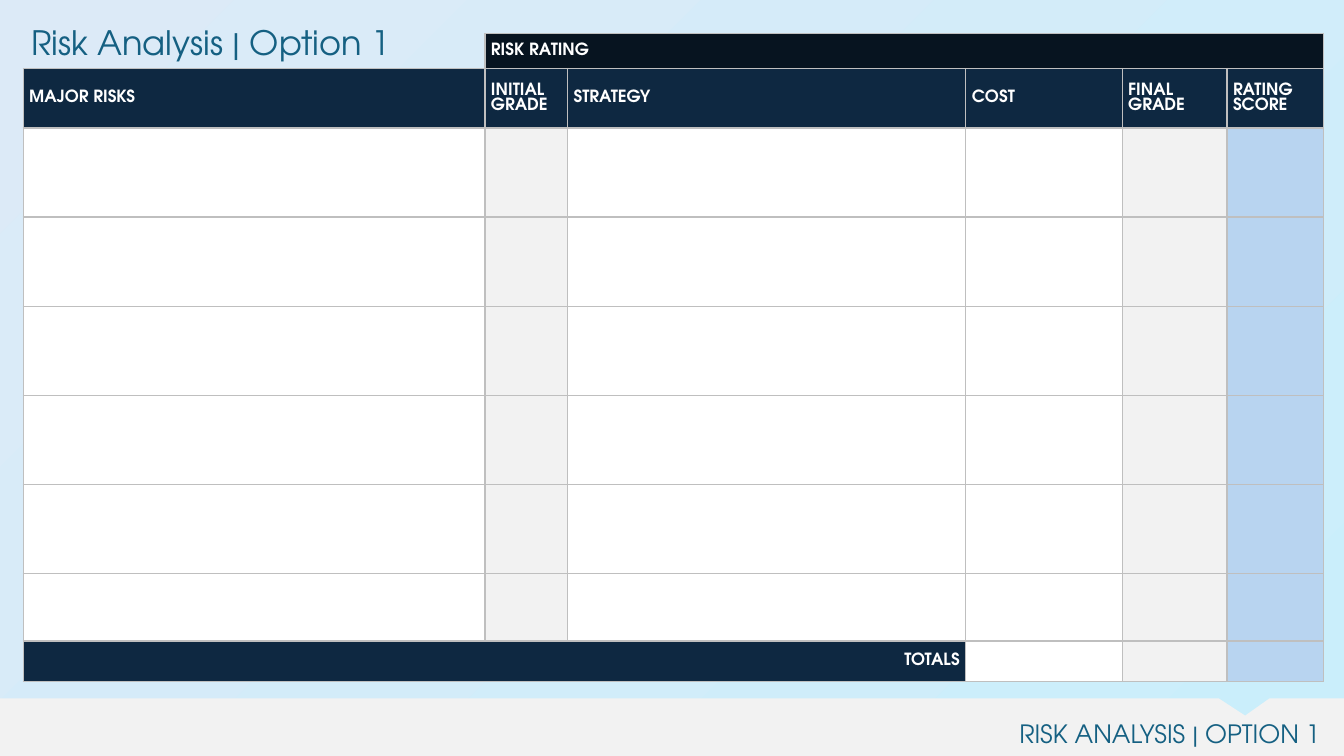
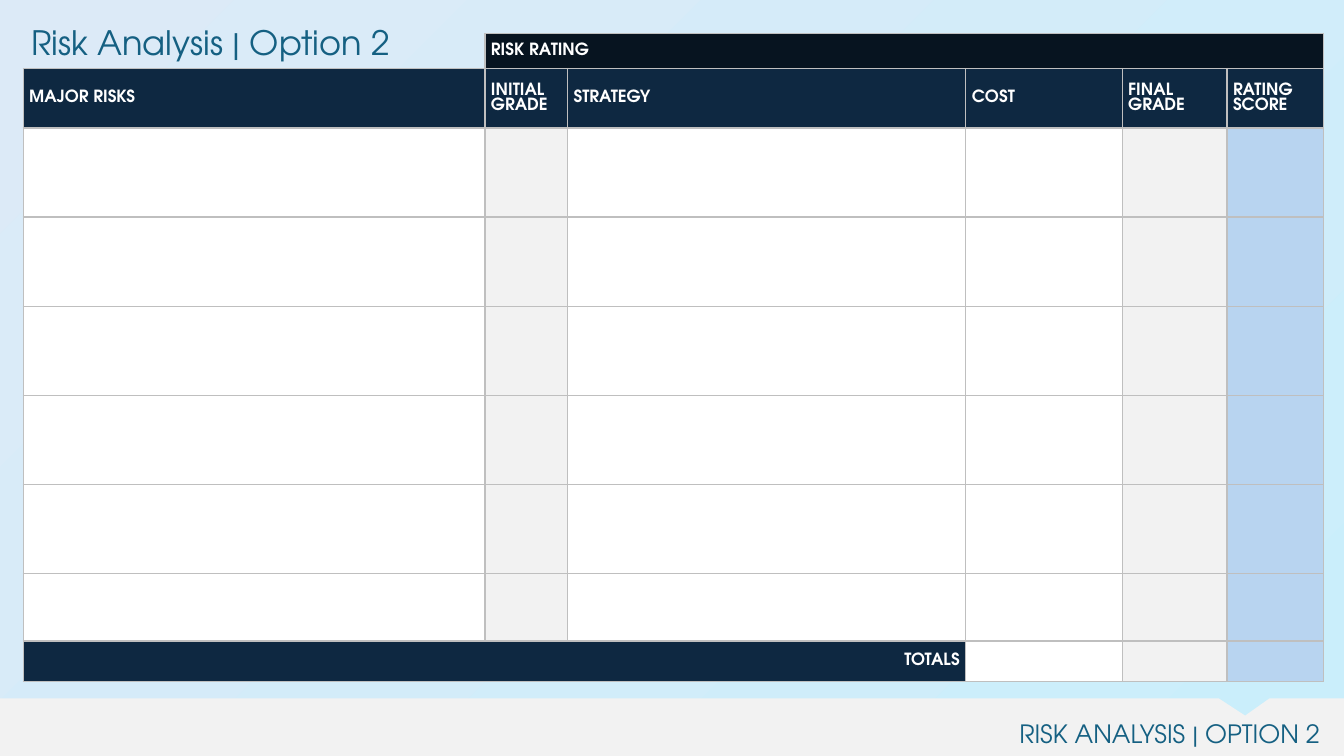
from dataclasses import dataclass
from typing import Any

import lxml.etree
import pptx
import pptx.dml.color
import pptx.enum.text
import pptx.oxml.ns
import pptx.util

Inches = pptx.util.Inches
Align = pptx.enum.text.PP_ALIGN
Anchor = pptx.enum.text.MSO_ANCHOR
qn = pptx.oxml.ns.qn

COLORS = {
    "sky": "CAEEFB",
    "mist": "DCEAF7",
    "band": "F2F2F2",
    "heading": "156082",
    "rating": "071420",
    "navy": "0E2841",
    "white": "FFFFFF",
    "score": "B8D4F0",
    "rule": "BFBFBF",
}
FONT = "TeX Gyre Adventor"
TITLE_FONT = {"name": FONT, "size": pptx.util.Pt(24), "bold": False}
FOOTER_FONT = {"name": FONT, "size": pptx.util.Pt(18), "bold": False}
LABEL_FONT = {"name": FONT, "size": pptx.util.Pt(12), "bold": True}
CELL_FORMAT = {
    "margin_left": Inches(0.06),
    "margin_right": Inches(0.06),
    "margin_top": 0,
    "margin_bottom": 0,
    "vertical_anchor": Anchor.MIDDLE,
}
BAND_OUTLINE = [
    (0, 6.93), (12.09, 6.93), (12.35, 7.1), (12.59, 6.93),
    (13.33, 6.93), (13.33, 7.5), (0, 7.5),
]
ROW_HEIGHTS = [0.35, 0.59] + [4.42 / 5] * 5 + [0.67, 0.4]
ALL_SIDES = ("lnL", "lnR", "lnT", "lnB")


@dataclass(frozen=True)
class Column:
    heading: str
    width: float
    fill: str


COLUMNS = [
    Column("MAJOR RISKS", 4.58, "white"),
    Column("INITIAL GRADE", 0.82, "band"),
    Column("STRATEGY", 3.95, "white"),
    Column("COST", 1.55, "white"),
    Column("FINAL GRADE", 1.04, "band"),
    Column("RATING SCORE", 0.96, "score"),
]


def rgb(color: str) -> pptx.dml.color.RGBColor:
    return pptx.dml.color.RGBColor.from_string(COLORS[color])


def apply_format(target: Any, values: dict[str, Any]) -> None:
    for attribute, value in values.items():
        setattr(target, attribute, value)


def write(frame: Any, text: str, font: dict[str, Any], color: str,
          align: Any = Align.LEFT) -> None:
    paragraph = frame.paragraphs[0]
    paragraph.alignment = align
    run = paragraph.add_run()
    run.text = text
    apply_format(run.font, font)
    run.font.color.rgb = rgb(color)


def place(shape: Any, left: float, top: float, width: float, height: float) -> None:
    apply_format(shape, {
        "left": Inches(left), "top": Inches(top),
        "width": Inches(width), "height": Inches(height),
    })


def draw_borders(cell: Any, visible: tuple[str, ...]) -> None:
    properties = cell._tc.get_or_add_tcPr()
    for side in ALL_SIDES:
        line = lxml.etree.SubElement(properties, qn(f"a:{side}"), w=str(pptx.util.Pt(1)))
        if side in visible:
            solid = lxml.etree.SubElement(line, qn("a:solidFill"))
            lxml.etree.SubElement(solid, qn("a:srgbClr"), val=COLORS["rule"])
        else:
            lxml.etree.SubElement(line, qn("a:noFill"))


def fill_cell(cell: Any, color: str) -> None:
    cell.fill.solid()
    cell.fill.fore_color.rgb = rgb(color)


def label_cell(cell: Any, text: str, color: str, align: Any = Align.LEFT) -> None:
    fill_cell(cell, color)
    write(cell.text_frame, text, LABEL_FONT, "white", align)


def draw_background(slide: Any) -> None:
    fill = slide.background.fill
    fill.gradient()
    fill.gradient_angle = 135
    for stop, color in zip(fill.gradient_stops, ("sky", "mist")):
        stop.color.rgb = rgb(color)


def draw_footer(slide: Any, text: str) -> None:
    points = [(Inches(x), Inches(y)) for x, y in BAND_OUTLINE]
    builder = slide.shapes.build_freeform(*points[0])
    builder.add_line_segments(points[1:], close=True)
    band = builder.convert_to_shape()
    band.shadow.inherit = False
    band.fill.solid()
    band.fill.fore_color.rgb = rgb("band")
    band.line.fill.background()

    caption = slide.shapes.add_textbox(
        Inches(6.41), Inches(7.08), Inches(6.78), Inches(0.4))
    caption.text_frame.word_wrap = True
    write(caption.text_frame, text, FOOTER_FONT, "heading", Align.RIGHT)


def draw_risk_table(slide: Any) -> None:
    risks = slide.shapes.add_table(
        len(ROW_HEIGHTS), len(COLUMNS), Inches(0.23), Inches(0.33),
        Inches(sum(column.width for column in COLUMNS)), Inches(sum(ROW_HEIGHTS))).table
    apply_format(risks, {"first_row": False, "horz_banding": False})
    for row, height in zip(risks.rows, ROW_HEIGHTS):
        row.height = Inches(height)
    for grid_column, column in zip(risks.columns, COLUMNS):
        grid_column.width = Inches(column.width)

    last_row, last_column = len(ROW_HEIGHTS) - 1, len(COLUMNS) - 1
    for r in range(len(ROW_HEIGHTS)):
        for c, column in enumerate(COLUMNS):
            cell = risks.cell(r, c)
            apply_format(cell, CELL_FORMAT)
            draw_borders(cell, ("lnR", "lnB") if r == c == 0 else ALL_SIDES)
            if r == 1:
                label_cell(cell, column.heading, "navy")
            elif r > 1:
                fill_cell(cell, column.fill)

    risks.cell(0, 0).fill.background()
    risks.cell(0, 1).merge(risks.cell(0, last_column))
    label_cell(risks.cell(0, 1), "RISK RATING", "rating")
    risks.cell(last_row, 0).merge(risks.cell(last_row, 2))
    label_cell(risks.cell(last_row, 0), "TOTALS", "navy", Align.RIGHT)


def draw_title(slide: Any, text: str) -> None:
    title = slide.shapes.title
    place(title, 0.21, 0.17, 7.19, 0.5)
    apply_format(title.text_frame, {"vertical_anchor": Anchor.TOP, "word_wrap": True,
                                    "auto_size": pptx.enum.text.MSO_AUTO_SIZE.NONE})
    write(title.text_frame, text, TITLE_FONT, "heading")


def build_slide(presentation: Any, heading: str) -> None:
    slide = presentation.slides.add_slide(presentation.slide_layouts[5])
    draw_background(slide)
    draw_footer(slide, heading.upper())
    draw_risk_table(slide)
    draw_title(slide, heading)


def main() -> None:
    presentation = pptx.Presentation()
    presentation.slide_width = Inches(13.33)
    presentation.slide_height = Inches(7.5)
    for option in (1, 2):
        build_slide(presentation, f"Risk Analysis | Option {option}")
    presentation.save("out.pptx")


if __name__ == "__main__":
    main()
